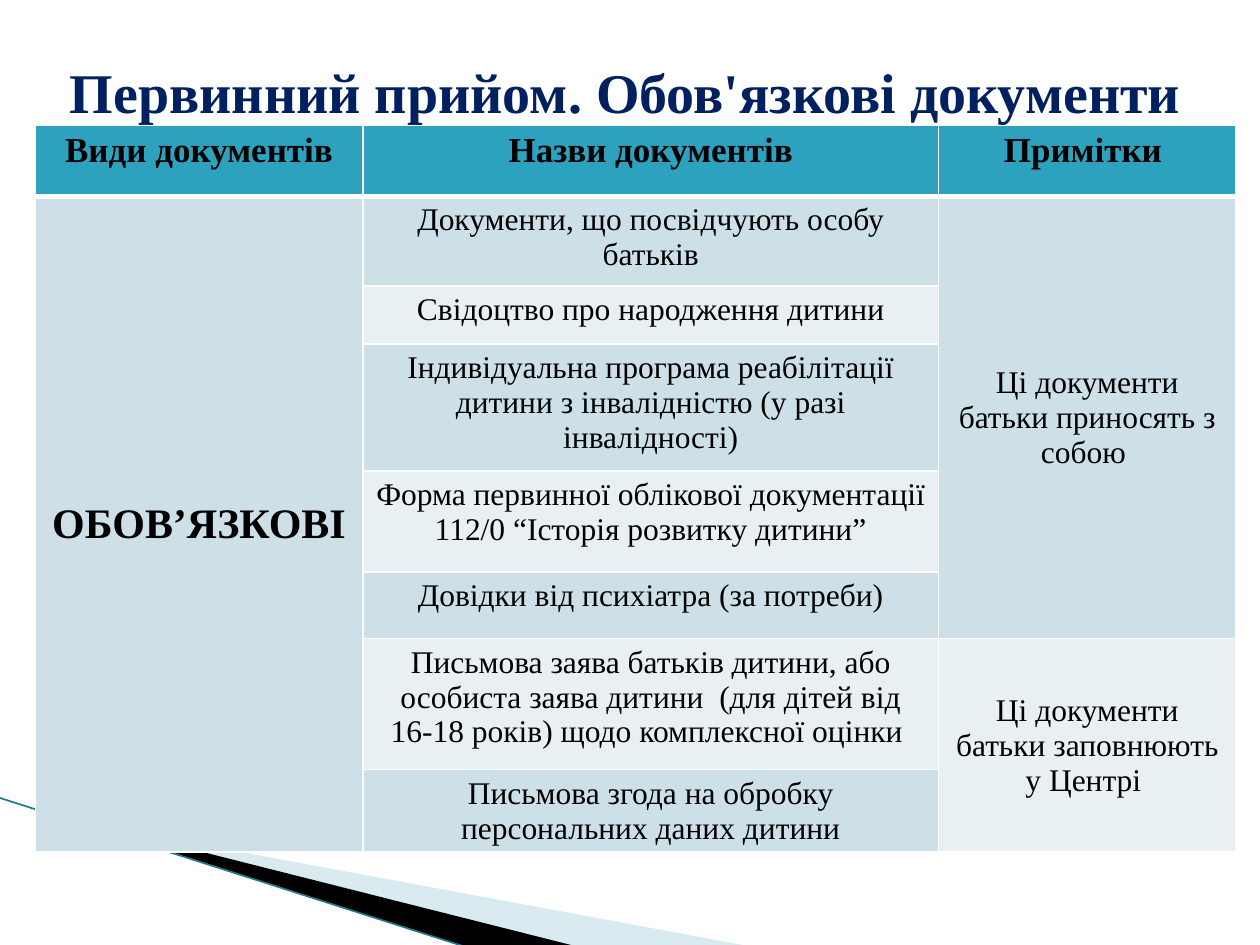
from dataclasses import dataclass

import pptx
import pptx.dml.color
import pptx.enum.shapes
import pptx.enum.text
import pptx.oxml.ns
import pptx.util
from lxml import etree
from pptx.dml.color import RGBColor
from pptx.util import Inches

FONT = "Times New Roman"
WHITE = RGBColor(0xFF, 0xFF, 0xFF)
BLACK = RGBColor(0, 0, 0)
NAVY = RGBColor(0x00, 0x20, 0x60)
TEAL = RGBColor(0x2D, 0xA2, 0xBF)
DARK_TEAL = RGBColor(0x1F, 0x7A, 0x8C)
PALE_BLUE = RGBColor(0xA0, 0xCB, 0xDC)
BAND_DARK = RGBColor(0xCD, 0xE0, 0xE8)
BAND_LIGHT = RGBColor(0xE8, 0xF0, 0xF4)

COL_WIDTHS = (2.6, 4.57, 2.36)
ROW_HEIGHTS = (0.57, 0.71, 0.46, 1.01, 0.8, 0.53, 1.04, 0.53)
HEADERS = ("Види документів", "Назви документів", "Примітки ")
DOCUMENTS = (
    "Документи, що посвідчують особу батьків",
    "Свідоцтво про народження дитини",
    "Індивідуальна програма реабілітації дитини з інвалідністю (у разі інвалідності)",
    "Форма первинної облікової документації 112/0 “Історія розвитку дитини”",
    "Довідки від психіатра (за потреби)",
    "Письмова заява батьків дитини, або особиста заява дитини  "
    "(для дітей від 16-18 років) щодо комплексної оцінки ",
    "Письмова згода на обробку персональних даних дитини",
)


@dataclass
class CellText:
    row: int
    col: int
    text: str
    size: int = 18
    bold: bool = False
    rows: int = 1


@dataclass
class Wedge:
    points: tuple[tuple[float, float], ...]
    color: RGBColor
    opacity: int = 100


CELLS = [
    *(CellText(0, c, text, 20, True) for c, text in enumerate(HEADERS)),
    *(CellText(r, 1, text) for r, text in enumerate(DOCUMENTS, 1)),
    CellText(1, 0, "ОБОВ’ЯЗКОВІ ", 24, True, rows=7),
    CellText(1, 2, "Ці документи батьки приносять з собою ", rows=5),
    CellText(6, 2, "Ці документи батьки заповнюють у Центрі ", rows=2),
]
WEDGES = (
    Wedge(((0.55, 6.51), (5.95, 7.51), (4.56, 7.51), (0.55, 6.5)), PALE_BLUE, 40),
    Wedge(((0.53, 6.49), (4.57, 7.51), (3.72, 7.52), (0.54, 6.5)), BLACK),
)


def add_child(parent, tag: str, **attrs: str):
    return etree.SubElement(parent, pptx.oxml.ns.qn(tag), attrs)


def write(tf, text: str, size: int, bold: bool, color: RGBColor) -> None:
    p = tf.paragraphs[0]
    p.alignment = pptx.enum.text.PP_ALIGN.CENTER
    r = p.add_run()
    r.text = text
    r.font.name = FONT
    r.font.size = pptx.util.Pt(size)
    r.font.bold = bold
    r.font.color.rgb = color


def add_wedge(slide, wedge: Wedge) -> None:
    points = [(Inches(x), Inches(y)) for x, y in wedge.points]
    builder = slide.shapes.build_freeform(*points[0])
    builder.add_line_segments(points[1:], close=True)
    sp = builder.convert_to_shape()
    sp.shadow.inherit = False
    sp.line.fill.background()
    sp.fill.solid()
    sp.fill.fore_color.rgb = wedge.color
    if wedge.opacity < 100:
        color = sp.fill._xPr.find(".//" + pptx.oxml.ns.qn("a:srgbClr"))
        add_child(color, "a:alpha", val=str(wedge.opacity * 1000))


def add_edge_line(slide) -> None:
    line = slide.shapes.add_connector(
        pptx.enum.shapes.MSO_CONNECTOR.STRAIGHT,
        Inches(-0.01), Inches(6.33), Inches(3.71), Inches(7.52))
    line.line.color.rgb = DARK_TEAL
    line.line.width = pptx.util.Pt(0.95)
    add_child(line._element.spPr, "a:effectLst")


def style_cell(cell, row: int) -> None:
    """Give a cell white borders, thicker under the header, and its band fill."""
    tc_pr = cell._tc.get_or_add_tcPr()
    thick_side = {0: "B", 1: "T"}.get(row)
    for side in "LRTB":
        points = 3 if side == thick_side else 1
        ln = add_child(tc_pr, f"a:ln{side}", w=str(pptx.util.Pt(points)))
        add_child(add_child(ln, "a:solidFill"), "a:srgbClr", val=str(WHITE))
    cell.fill.solid()
    band = BAND_DARK if row % 2 else BAND_LIGHT
    cell.fill.fore_color.rgb = TEAL if row == 0 else band


def add_documents_table(slide) -> None:
    frame = slide.shapes.add_table(
        len(ROW_HEIGHTS), len(COL_WIDTHS), Inches(0.28), Inches(0.99),
        Inches(sum(COL_WIDTHS)), Inches(sum(ROW_HEIGHTS)))
    table = frame.table
    for column, width in zip(table.columns, COL_WIDTHS):
        column.width = Inches(width)
    for i, (row, height) in enumerate(zip(table.rows, ROW_HEIGHTS)):
        row.height = Inches(height)
        for cell in row.cells:
            style_cell(cell, i)
    for item in CELLS:
        cell = table.cell(item.row, item.col)
        if item.rows > 1:
            cell.merge(table.cell(item.row + item.rows - 1, item.col))
            cell.vertical_anchor = pptx.enum.text.MSO_ANCHOR.MIDDLE
        write(cell.text_frame, item.text, item.size, item.bold, BLACK)


def format_title(slide) -> None:
    title = slide.shapes.title
    title.left, title.top = Inches(0.2), Inches(0.3)
    title.width, title.height = Inches(9.53), Inches(0.85)
    tf = title.text_frame
    tf.word_wrap = True
    tf.vertical_anchor = pptx.enum.text.MSO_ANCHOR.MIDDLE
    write(tf, "Первинний прийом. Обов'язкові документи", 32, True, NAVY)
    slide.shapes._spTree.append(title._element)  # in front of the table


def main() -> None:
    prs = pptx.Presentation()
    prs.slide_width, prs.slide_height = Inches(10), Inches(7.5)
    slide = prs.slides.add_slide(prs.slide_layouts[5])
    for wedge in WEDGES:
        add_wedge(slide, wedge)
    add_edge_line(slide)
    add_documents_table(slide)
    format_title(slide)
    prs.save("out.pptx")


if __name__ == "__main__":
    main()
